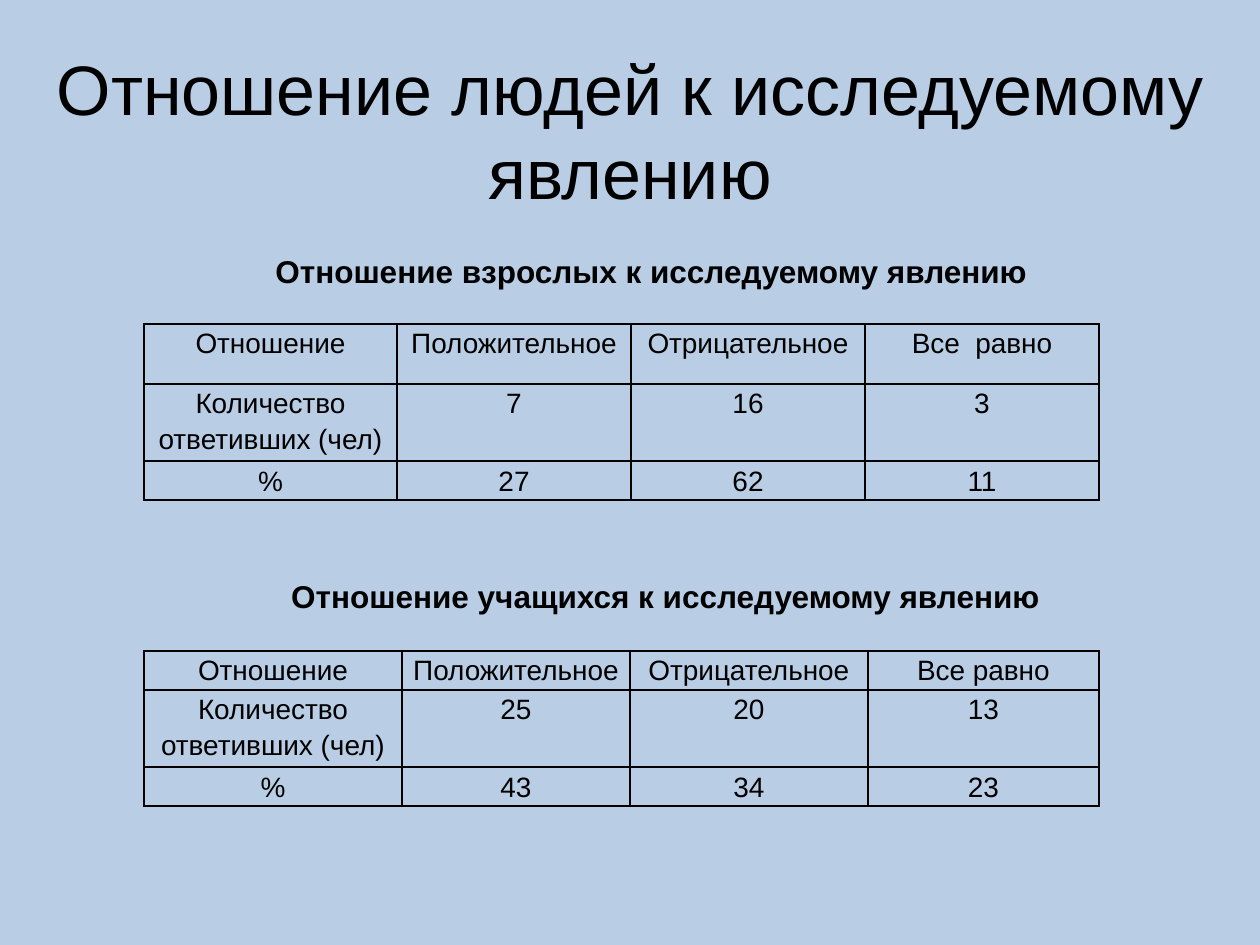
from dataclasses import dataclass

from lxml.etree import SubElement
from pptx import Presentation
from pptx.dml.color import RGBColor
from pptx.enum.text import MSO_ANCHOR as Anchor, MSO_AUTO_SIZE as AutoSize, PP_ALIGN as Align
from pptx.oxml.ns import qn
from pptx.util import Emu, Pt

PX_PER_INCH = 126
COLORS = {"background": "B9CDE5", "ink": "000000"}


def px(length):
    return Emu(round(length * 914400 / PX_PER_INCH))


@dataclass
class SlideBuilder:
    slide: object
    font: str = "Arial"
    ink: str = COLORS["ink"]
    cell_size: int = 16
    cell_margin: int = 9
    cell_spacing: float = 1.15
    border_width: int = 1

    def background(self, color):
        fill = self.slide.background.fill
        fill.solid()
        fill.fore_color.rgb = RGBColor.from_string(color)

    def add_run(self, paragraph, words, size, bold=False):
        run = paragraph.add_run()
        run.text = words
        run.font.name = self.font
        run.font.size = Pt(size)
        run.font.bold = bold
        run.font.color.rgb = RGBColor.from_string(self.ink)

    def text(self, box, words, size, bold=False, align=Align.CENTER,
             anchor=Anchor.TOP, wrap=True):
        frame = self.slide.shapes.add_textbox(*map(px, box)).text_frame
        frame.word_wrap = wrap
        frame.auto_size = AutoSize.SHAPE_TO_FIT_TEXT
        frame.vertical_anchor = anchor
        paragraph = frame.paragraphs[0]
        paragraph.alignment = align
        self.add_run(paragraph, words, size, bold)

    def table(self, left, top, widths, heights, rows):
        box = (left, top, sum(widths), sum(heights))
        table = self.slide.shapes.add_table(
            len(heights), len(widths), *map(px, box)).table
        table.first_row = table.horz_banding = False
        for column, width in zip(table.columns, widths):
            column.width = px(width)
        for row, height, values in zip(table.rows, heights, rows):
            row.height = px(height)
            for cell, words in zip(row.cells, values):
                self.fill_cell(cell, words)

    def fill_cell(self, cell, words):
        cell.margin_left = cell.margin_right = px(self.cell_margin)
        cell.margin_top = cell.margin_bottom = 0
        paragraph = cell.text_frame.paragraphs[0]
        paragraph.alignment = Align.CENTER
        paragraph.line_spacing = self.cell_spacing
        self.add_run(paragraph, words, self.cell_size)
        self.border_cell(cell)
        cell.fill.background()

    def border_cell(self, cell):
        properties = cell._tc.get_or_add_tcPr()
        for side in ("a:lnL", "a:lnR", "a:lnT", "a:lnB"):
            line = SubElement(properties, qn(side), w=str(Pt(self.border_width)))
            solid = SubElement(line, qn("a:solidFill"))
            SubElement(solid, qn("a:srgbClr"), val=self.ink)


def main():
    deck = Presentation()
    deck.slide_width, deck.slide_height = px(1260), px(945)
    builder = SlideBuilder(deck.slides.add_slide(deck.slide_layouts[6]))
    builder.background(COLORS["background"])

    builder.text((0, 39, 1260, 183), "Отношение людей к исследуемому явлению", 40)

    builder.text((263, 246, 827, 50), "Отношение взрослых к исследуемому явлению", 18,
                 bold=True, align=Align.LEFT, anchor=Anchor.MIDDLE)
    builder.table(144, 324, (253, 234, 234, 234), (60, 77, 39), (
        ("Отношение", "Положительное", "Отрицательное", "Все  равно"),
        ("Количество ответивших (чел)", "7", "16", "3"),
        ("%", "27", "62", "11"),
    ))

    builder.text((266, 571, 799, 50), "Отношение учащихся к исследуемому явлению", 18,
                 bold=True, anchor=Anchor.MIDDLE, wrap=False)
    builder.table(144, 651, (258, 228, 238, 231), (39, 77, 39), (
        ("Отношение", "Положительное", "Отрицательное", "Все равно"),
        ("Количество ответивших (чел)", "25", "20", "13"),
        ("%", "43", "34", "23"),
    ))

    deck.save("out.pptx")


if __name__ == "__main__":
    main()
